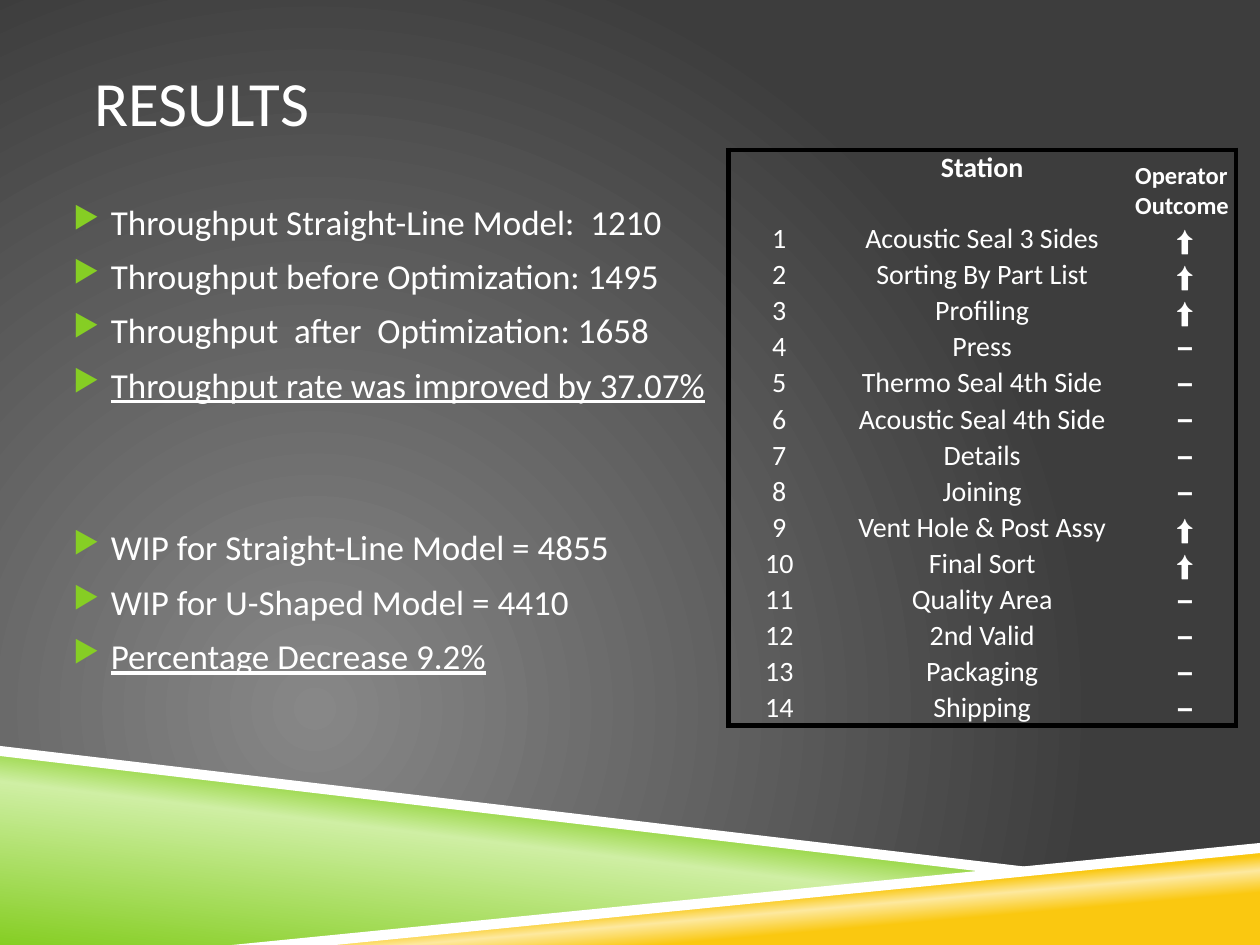
from lxml import etree
from pptx import Presentation
from pptx.dml.color import RGBColor
from pptx.enum import text
from pptx.oxml import ns
from pptx.util import Inches, Pt

WHITE, BLACK, GREEN, GOLD = "FFFFFF", "000000", "86CE24", "FAC810"

# Content
TITLE = "RESULTS"
FINDINGS = [  # groups of (wording, underlined)
    [("Throughput Straight-Line Model:  1210", False),
     ("Throughput before Optimization: 1495", False),
     ("Throughput  after  Optimization: 1658", False),
     ("Throughput rate was improved by 37.07%", True)],
    [("WIP for Straight-Line Model = 4855", False),
     ("WIP for U-Shaped Model = 4410", False),
     ("Percentage Decrease 9.2%", True)],
]
HEADINGS = ["", "Station", "Operator Outcome"]
STATIONS = ["Acoustic Seal 3 Sides", "Sorting By Part List", "Profiling", "Press",
            "Thermo Seal 4th Side", "Acoustic Seal 4th Side", "Details", "Joining",
            "Vent Hole & Post Assy", "Final Sort", "Quality Area", "2nd Valid",
            "Packaging", "Shipping"]
IMPROVED = {1, 2, 3, 9, 10}

# Decoration: (outline, solid colour or gradient stops, gradient angle)
BANDS = [
    ([(1.98, 7.5), (10, 6.72), (10, 7.5)],
     [(28, GOLD), (40, "FDE99F"), (48, GOLD)], 265),
    ([(0, 5.97), (7.92, 6.92), (2, 7.5), (0, 7.5)],
     [(0, GREEN), (52, "CFEFA4"), (66, GREEN)], 277),
    ([(0, 5.92), (0, 6), (7.9, 6.93), (8.32, 6.9)], WHITE, None),
    ([(10, 6.69), (1.84, 7.5), (2.66, 7.5), (10, 6.77)], WHITE, None),
]


def rgb(value):
    return RGBColor.from_string(value)


def add_xml(parent, tag, **attributes):
    return etree.SubElement(parent, ns.qn(tag), attributes)


def paint_gradient(fill, owner, stops, angle=None):
    """Linear gradient at an angle, or a circular one when there is no angle."""
    fill.gradient()
    gradient = next(owner.iter(ns.qn("a:gradFill")))
    for child in list(gradient):
        gradient.remove(child)
    stop_list = add_xml(gradient, "a:gsLst")
    for position, colour in stops:
        stop = add_xml(stop_list, "a:gs", pos=str(position * 1000))
        add_xml(stop, "a:srgbClr", val=colour)
    if angle is None:
        circle = add_xml(gradient, "a:path", path="circle")
        add_xml(circle, "a:fillToRect", l="50000", t="100000", r="100000", b="50000")
    else:
        add_xml(gradient, "a:lin", ang=str(angle * 60000), scaled="0")


def write(paragraph, wording, **formats):
    run = paragraph.add_run()
    run.text = wording
    run.font.color.rgb = rgb(WHITE)
    for name, value in ({"name": "Calibri"} | formats).items():
        setattr(run.font, name, value)


def set_frame(frame, **formats):
    margins = {"margin_left": 0, "margin_right": 0,
               "margin_top": Inches(0.05), "margin_bottom": Inches(0.05)}
    for name, value in (margins | {"word_wrap": True} | formats).items():
        setattr(frame, name, value)


def add_bullet(paragraph):
    properties = paragraph._p.get_or_add_pPr()
    properties.set("marL", str(Inches(0.38)))
    properties.set("indent", str(Inches(-0.3)))
    add_xml(add_xml(properties, "a:buClr"), "a:srgbClr", val=GREEN)
    add_xml(properties, "a:buSzPct", val="85000")
    add_xml(properties, "a:buChar", char="▶")


def set_borders(cell, outer):
    """Black 3 pt line on the outer edges, none on the others."""
    properties = cell._tc.get_or_add_tcPr()
    for edge in "LRTB":
        line = add_xml(properties, f"a:ln{edge}", w=str(Pt(3)))
        if edge in outer:
            add_xml(add_xml(line, "a:solidFill"), "a:srgbClr", val=BLACK)
        else:
            add_xml(line, "a:noFill")


prs = Presentation()
prs.slide_width, prs.slide_height = Inches(10), Inches(7.5)
slide = prs.slides.add_slide(prs.slide_layouts[5])
paint_gradient(slide.background.fill, slide._element, [(0, "878787"), (100, "3D3D3D")])

# Bands at the foot
for outline, paint, angle in BANDS:
    points = [(Inches(x), Inches(y)) for x, y in outline]
    builder = slide.shapes.build_freeform(*points[0])
    builder.add_line_segments(points[1:], close=True)
    band = builder.convert_to_shape()
    band.shadow.inherit = False
    band.line.fill.background()
    if angle is None:
        band.fill.solid()
        band.fill.fore_color.rgb = rgb(paint)
    else:
        paint_gradient(band.fill, band._element, paint, angle)

# Title
title = slide.shapes.title
title.left, title.top, title.width, title.height = map(Inches, (0.75, 0.18, 8.5, 1.25))
set_frame(title.text_frame, vertical_anchor=text.MSO_ANCHOR.MIDDLE)
heading = title.text_frame.paragraphs[0]
heading.alignment = text.PP_ALIGN.LEFT
write(heading, TITLE, size=Pt(36))

# Findings
findings = slide.shapes.add_textbox(*map(Inches, (0.5, 1.54, 6.06, 4.14))).text_frame
set_frame(findings)
for g, group in enumerate(FINDINGS):
    for i, (wording, underlined) in enumerate(group):
        first = g == i == 0
        paragraph = findings.paragraphs[0] if first else findings.add_paragraph()
        paragraph.space_before = Pt(0 if first else 7 if i else 69)
        add_bullet(paragraph)
        write(paragraph, wording, size=Pt(20), underline=underlined)

# Station table
rows = [HEADINGS] + [[str(n), station, "⬆" if n in IMPROVED else "−"]
                     for n, station in enumerate(STATIONS, 1)]
last_row, last_column = len(rows) - 1, len(HEADINGS) - 1
table = slide.shapes.add_table(len(rows), len(HEADINGS),
                               *map(Inches, (5.78, 1.19, 4.03, 4.57))).table
table.first_row = table.horz_banding = False
for column, width in zip(table.columns, (0.81, 2.41, 0.81)):
    column.width = Inches(width)
for r, row in enumerate(rows):
    table.rows[r].height = Inches(0.56 if r == 0 else (4.57 - 0.56) / last_row)
    for c, wording in enumerate(row):
        cell = table.cell(r, c)
        outer = {edge for edge, on_edge in (("L", c == 0), ("R", c == last_column),
                                            ("T", r == 0), ("B", r == last_row)) if on_edge}
        set_borders(cell, outer)
        cell.fill.background()
        cell.margin_left = cell.margin_right = cell.margin_top = Inches(0.01)
        cell.margin_bottom = 0
        outcome = c == last_column
        cell.vertical_anchor = (text.MSO_ANCHOR.BOTTOM if outcome else
                                text.MSO_ANCHOR.MIDDLE if r else text.MSO_ANCHOR.TOP)
        paragraph = cell.text_frame.paragraphs[0]
        paragraph.alignment = (text.PP_ALIGN.LEFT if outcome and r == 0
                               else text.PP_ALIGN.CENTER)
        if wording:
            write(paragraph, wording,
                  size=Pt(14 if outcome and r == 0 else 16),
                  bold=r == 0 or wording == "−",
                  name="Arial" if outcome and r else "Calibri")

prs.save("out.pptx")
